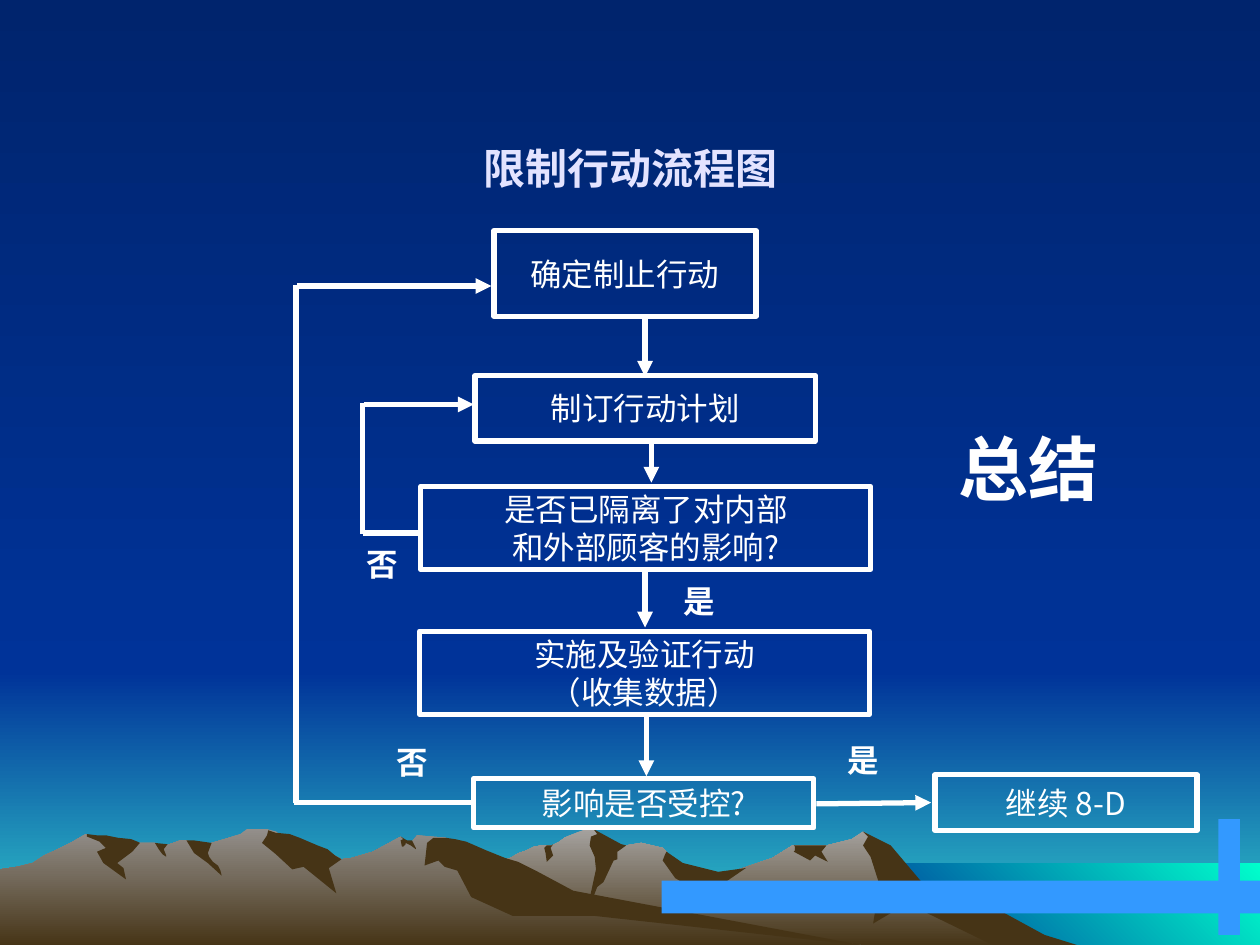
from dataclasses import dataclass

from lxml.etree import SubElement
from pptx import Presentation
from pptx.dml.color import RGBColor
from pptx.enum.shapes import MSO_CONNECTOR, MSO_SHAPE
from pptx.enum.text import MSO_ANCHOR as Anchor, MSO_AUTO_SIZE as AutoSize, PP_ALIGN as Align
from pptx.oxml.ns import qn
from pptx.util import Emu, Pt

EMU_PER_PX = 9144


@dataclass(frozen=True)
class Theme:
    font: str = "Noto Sans CJK SC"
    night: str = "00246D"
    blue: str = "003399"
    horizon: str = "33CCCC"
    sea: str = "00FFCC"
    rock: str = "463416"
    right_peak: str = "A5A29F"
    left_peak: str = "938F8B"
    bar: str = "3399FF"
    title: str = "E3E3FF"
    ink: str = "FFFFFF"
    title_size: int = 24
    body_size: int = 18
    summary_size: int = 40
    line: int = 3


T = Theme()
DOWN, UP_RIGHT = 270, 45

RIGHT_RANGE = [
    (802, 740), (778, 727), (764, 723), (723, 698), (702, 671), (685, 660), (676, 666), (656, 671),
    (629, 671), (613, 681), (566, 697), (536, 690), (529, 676), (526, 673), (509, 669), (497, 671),
    (486, 673), (474, 661), (471, 658), (465, 658), (450, 664), (448, 665), (444, 668), (438, 671),
    (430, 671), (424, 672), (418, 675), (412, 677), (405, 681), (399, 683), (394, 685), (355, 698),
    (327, 709), (277, 739), (258, 751), (821, 751)]
RIGHT_SHADOWS = [
    [(796, 724), (771, 724), (734, 703), (707, 671), (685, 660), (689, 664), (685, 671), (691, 680),
     (698, 702), (693, 733), (720, 717), (792, 752), (858, 751), (829, 742)],
    [(471, 658), (474, 662), (469, 664), (468, 671), (472, 680), (473, 690), (465, 727), (474, 704),
     (479, 700), (487, 683), (490, 682), (490, 676), (497, 671), (493, 670)],
    [(529, 676), (528, 678), (526, 683), (536, 697), (580, 723), (576, 700), (592, 689), (570, 692),
     (542, 685)],
    [(650, 671), (630, 671), (631, 672), (631, 675), (630, 676), (643, 683), (647, 679), (657, 684),
     (652, 676), (656, 671)],
    [(433, 677), (432, 673), (434, 671), (438, 671), (439, 670), (437, 673), (439, 679), (434, 684)]]
LEFT_RANGE = [
    (690, 751), (667, 748), (432, 712), (354, 665), (331, 663), (327, 668), (323, 668), (318, 664),
    (296, 676), (279, 681), (271, 682), (260, 676), (236, 681), (223, 663), (219, 660), (212, 658),
    (196, 658), (191, 662), (178, 666), (168, 669), (160, 671), (148, 667), (143, 667), (132, 671),
    (128, 671), (123, 669), (111, 669), (94, 671), (68, 662), (56, 669), (46, 674), (35, 679),
    (26, 685), (14, 688), (0, 690), (0, 751)]
LEFT_SHADOWS = [
    [(212, 663), (208, 669), (219, 678), (232, 690), (241, 688), (267, 709), (261, 689), (271, 682),
     (266, 679), (260, 674), (252, 671), (245, 668), (238, 665), (230, 662), (219, 661), (213, 659)],
    [(370, 668), (361, 666), (354, 665), (344, 665), (339, 669), (337, 687), (348, 683), (353, 688),
     (363, 691), (374, 712), (407, 727), (472, 727), (690, 751), (683, 750), (455, 707), (427, 692),
     (411, 684), (401, 681), (386, 675)],
    [(318, 667), (320, 666), (318, 664), (323, 667), (327, 667), (330, 673), (330, 674), (326, 671),
     (322, 669), (322, 670), (320, 672), (319, 672)],
    [(154, 667), (161, 668), (168, 669), (165, 677), (166, 680), (169, 684), (173, 687), (175, 691),
     (176, 695), (165, 685), (154, 677), (148, 667)],
    [(133, 670), (130, 674), (132, 679), (132, 680), (129, 678), (126, 674), (123, 669)],
    [(109, 668), (111, 669), (105, 676), (93, 685), (98, 689), (100, 698), (82, 685), (77, 676),
     (84, 673), (79, 668), (69, 664), (69, 662), (77, 663), (84, 663), (94, 665), (104, 666)]]

STEPS = [
    ((192, 33, 208, 68), ["确定制止行动"]),
    ((177, 148, 270, 52), ["制订行动计划"]),
    ((134, 236, 357, 66), ["是否已隔离了对内部", "和外部顾客的影响?"]),
    ((133, 351, 357, 66), ["实施及验证行动", "（收集数据）"]),
    ((176, 468, 270, 39), ["影响是否受控?"]),
    ((542, 465, 208, 44), ["继续 8-D"])]
ARROWS = [
    (312, 103, 312, 149), (317, 200, 317, 233), (312, 303, 312, 348), (313, 419, 313, 466),
    (448, 488, 539, 487), (36, 77, 190, 77), (89, 171, 176, 171)]
LINES = [(134, 273, 88, 273), (88, 274, 88, 170), (174, 487, 33, 487), (35, 487, 35, 76)]
ANSWERS = [
    (105, 435, "否", Align.JUSTIFY), (81, 278, "否", Align.JUSTIFY),
    (333, 307, "是", Align.JUSTIFY), (463, 433, "是", Align.LEFT)]


def px(*values):
    return [Emu(v * EMU_PER_PX) for v in values]


def paint(fill, colors, angle=DOWN):
    if len(colors) == 1:
        fill.solid()
        fill.fore_color.rgb = RGBColor.from_string(colors[0])
        return
    fill.gradient()
    fill.gradient_angle = angle
    for stop, color in zip(fill.gradient_stops, colors):
        stop.color.rgb = RGBColor.from_string(color)


def add_outline(s, box, points, *colors, angle=DOWN):
    corners = [px(box[0] + x, box[1] + y) for x, y in points]
    builder = s.shapes.build_freeform(*corners[0], scale=1.0)
    builder.add_line_segments(corners[1:], close=True)
    sp = builder.convert_to_shape()
    sp.shadow.inherit = False
    sp.line.fill.background()
    paint(sp.fill, colors, angle)


def add_rect(s, box, x, y, w, h):
    sp = s.shapes.add_shape(MSO_SHAPE.RECTANGLE, *px(box[0] + x, box[1] + y, w, h))
    sp.shadow.inherit = False
    return sp


def write(tf, lines, size, color=T.ink, bold=False, align=Align.CENTER, wrap=False):
    tf.word_wrap = wrap
    for i, line in enumerate(lines):
        p = tf.add_paragraph() if i else tf.paragraphs[0]
        p.text = line
        p.alignment = align
        f = p.font
        f.name, f.size, f.bold = T.font, Pt(size), bold
        f.color.rgb = RGBColor.from_string(color)
        SubElement(p._p.pPr.find(qn("a:defRPr")), qn("a:ea"), typeface=T.font)


def add_text(s, x, y, w, h, text, size, **style):
    tf = s.shapes.add_textbox(*px(x, y, w, h)).text_frame
    write(tf, [text], size, bold=True, **style)
    return tf


def add_line(s, box, x1, y1, x2, y2, arrow=False):
    x, y = box[:2]
    c = s.shapes.add_connector(MSO_CONNECTOR.STRAIGHT, *px(x + x1, y + y1, x + x2, y + y2))
    c.line.color.rgb = RGBColor.from_string(T.ink)
    c.line.width = Pt(T.line)
    if arrow:
        SubElement(c.line._get_or_add_ln(), qn("a:tailEnd"), type="triangle")
    SubElement(c._element.spPr, qn("a:effectLst"))


def draw_landscape(s, box):
    w, h = box[2:]
    paint(s.background.fill, (T.night, T.blue))
    add_outline(s, box, [(w, h), (0, h), (0, 533), (w, 533)], T.blue, T.horizon)
    add_outline(s, box, [(w, 533), (0, 533), (0, 0), (w, 0)], T.night, T.blue)
    add_outline(s, box, [(w, 752), (683, 752), (683, 685), (w, 685)], T.blue, T.sea, angle=UP_RIGHT)
    for ridge, peak, shadows in ((RIGHT_RANGE, T.right_peak, RIGHT_SHADOWS),
                                 (LEFT_RANGE, T.left_peak, LEFT_SHADOWS)):
        add_outline(s, box, ridge, peak, T.rock)
        for shadow in shadows:
            add_outline(s, box, shadow, T.rock)
    for bar in ((525, 699, 475, 26), (967, 650, 17, 92)):
        sp = add_rect(s, box, *bar)
        sp.line.fill.background()
        paint(sp.fill, (T.bar,))


def draw_flowchart(s, box):
    for place, lines in STEPS:
        sp = add_rect(s, box, *place)
        sp.fill.background()
        sp.line.color.rgb = RGBColor.from_string(T.ink)
        sp.line.width = Pt(T.line)
        sp.text_frame.vertical_anchor = Anchor.MIDDLE
        write(sp.text_frame, lines, T.body_size)
    for ends in LINES:
        add_line(s, box, *ends)
    for ends in ARROWS:
        add_line(s, box, *ends, arrow=True)
    for x, y, text, align in ANSWERS:
        tf = add_text(s, box[0] + x, box[1] + y, 45, 40, text, T.body_size, align=align)
        tf.auto_size = AutoSize.SHAPE_TO_FIT_TEXT


def draw_title(s, box):
    tf = add_text(s, *box, "限制行动流程图 ", T.title_size, color=T.title, wrap=True)
    tf.vertical_anchor = Anchor.MIDDLE


def draw_summary(s, box):
    tf = add_text(s, *box, "总结", T.summary_size, wrap=True)
    tf.auto_size = AutoSize.SHAPE_TO_FIT_TEXT


def main():
    prs = Presentation()
    prs.slide_width, prs.slide_height = px(1000, 750)
    s = prs.slides.add_slide(prs.slide_layouts[6])
    draw_landscape(s, (0, 0, 1000, 750))
    draw_title(s, (267, 92, 475, 83))
    draw_flowchart(s, (200, 150, 750, 510))
    draw_summary(s, (725, 333, 183, 77))
    prs.save("out.pptx")


if __name__ == "__main__":
    main()
